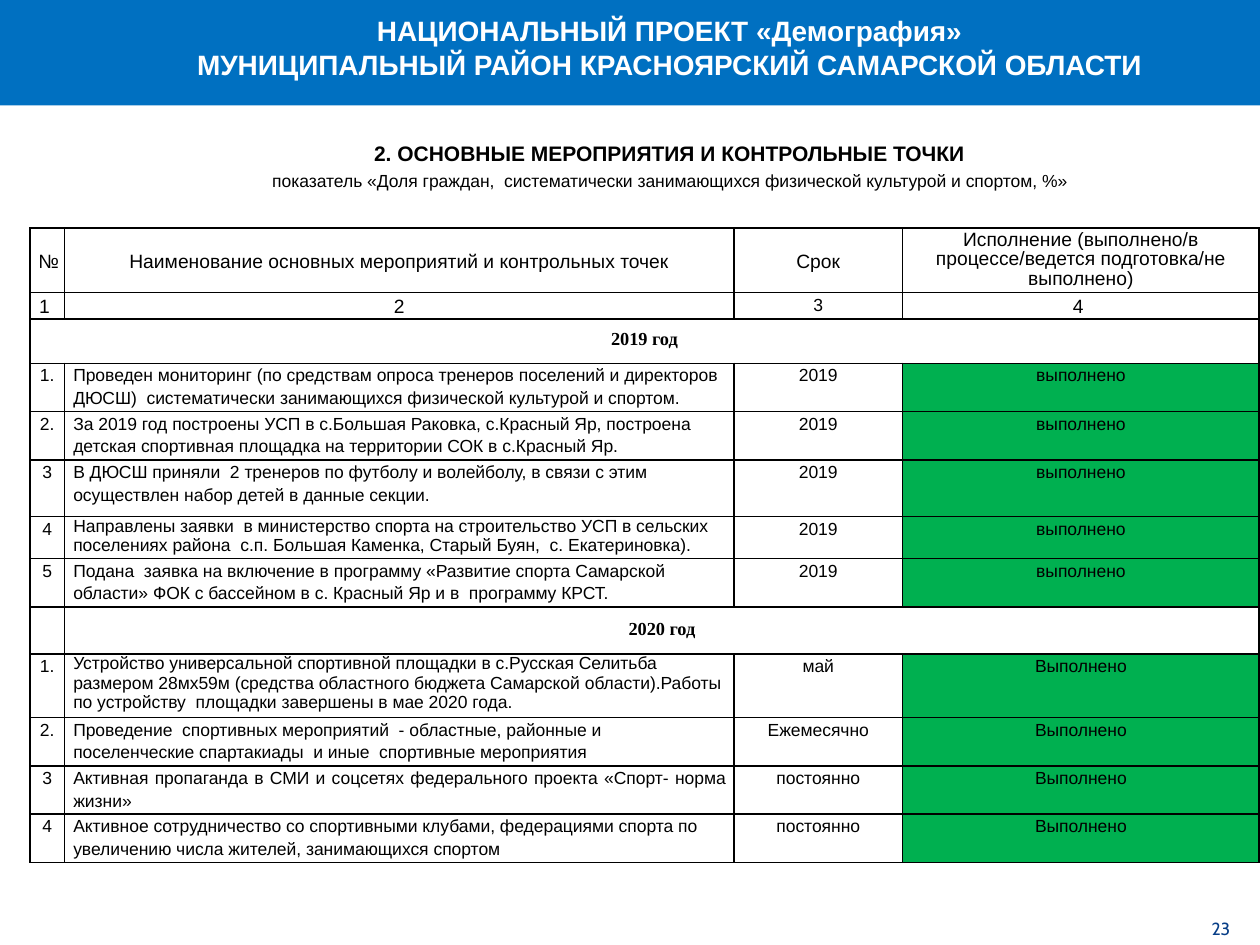
from dataclasses import dataclass

from lxml import etree
from pptx import Presentation
from pptx.dml.color import RGBColor
from pptx.enum.shapes import MSO_SHAPE
from pptx.enum.text import MSO_ANCHOR, PP_ALIGN
from pptx.oxml.ns import qn
from pptx.util import Pt

RECTANGLE = MSO_SHAPE.RECTANGLE
LEFT, CENTER, JUSTIFY = PP_ALIGN.LEFT, PP_ALIGN.CENTER, PP_ALIGN.JUSTIFY
TOP, MIDDLE, BOTTOM = MSO_ANCHOR.TOP, MSO_ANCHOR.MIDDLE, MSO_ANCHOR.BOTTOM


@dataclass(frozen=True)
class Theme:
    """Colours, fonts and type sizes of the slide."""
    banner: str = "0070C1"
    white: str = "FFFFFF"
    black: str = "000000"
    done: str = "00B050"
    page: str = "073E87"
    sans: str = "Arial"
    serif: str = "Times New Roman"
    page_font: str = "Cabin"
    title: float = 16
    heading: float = 12
    header: float = 11
    year: float = 10.5
    body: float = 10


THEME = Theme()
LOOSE = 1.15
COLUMN_WIDTHS = [20, 382.4, 96.4, 203.8]
ROW_HEIGHTS = [36.9, 15.2, 25.2, 27.6, 27.6, 32.3, 24, 27.6, 26.9, 36.3, 27.6, 27.6, 27.6]
HEADERS = [
    ("№", LOOSE),
    ("Наименование основных мероприятий и контрольных точек", LOOSE),
    ("Срок", LOOSE),
    ("Исполнение (выполнено/в процессе/ведется подготовка/не выполнено)", Pt(11)),
]
COLUMN_NUMBERS = [("1 ", THEME.header), ("2", THEME.header), ("3", THEME.body), ("4 ", THEME.header)]
ACTIVITIES_2019 = [
    ("1.", "Проведен мониторинг (по средствам опроса тренеров поселений и директоров ДЮСШ)  "
     "систематически занимающихся физической культурой и спортом.", "2019", LOOSE, LEFT),
    ("2.", "За 2019 год построены УСП в с.Большая Раковка, с.Красный Яр, построена детская "
     "спортивная площадка на территории СОК в с.Красный Яр.", "2019", LOOSE, LEFT),
    ("3", "В ДЮСШ приняли  2 тренеров по футболу и волейболу, в связи с этим осуществлен "
     "набор детей в данные секции.", "2019", LOOSE, LEFT),
    ("4", "Направлены заявки  в министерство спорта на строительство УСП в сельских поселениях "
     "района  с.п. Большая Каменка, Старый Буян,  с. Екатериновка).", "2019", 1.0, LEFT),
    ("5", "Подана  заявка на включение в программу «Развитие спорта Самарской области» ФОК "
     "с бассейном в с. Красный Яр и в  программу КРСТ.", "2019", LOOSE, LEFT),
]
ACTIVITIES_2020 = [
    ("1.", "Устройство универсальной спортивной площадки в с.Русская Селитьба  размером 28мх59м "
     "(средства областного бюджета Самарской области).Работы по устройству  площадки "
     "завершены в мае 2020 года.", "май", 1.0, LEFT),
    ("2.", "Проведение  спортивных мероприятий  - областные, районные и поселенческие "
     "спартакиады  и иные  спортивные мероприятия", "Ежемесячно", LOOSE, LEFT),
    ("3", "Активная пропаганда в СМИ и соцсетях федерального проекта «Спорт- норма жизни»",
     "постоянно", LOOSE, JUSTIFY),
    ("4", "Активное сотрудничество со спортивными клубами, федерациями спорта по увеличению "
     "числа жителей, занимающихся спортом", "постоянно", LOOSE, LEFT),
]


def style_paragraph(paragraph, size, color=THEME.black, bold=False, name=THEME.sans, align=CENTER):
    """Set alignment and font of a paragraph."""
    paragraph.alignment = align
    font = paragraph.font
    font.size, font.bold, font.name = Pt(size), bold, name
    font.color.rgb = RGBColor.from_string(color)


def add_banner(slide):
    """Draw the coloured band at the top."""
    shape = slide.shapes.add_shape(RECTANGLE, 0, 0, Pt(720), Pt(60.3))
    shape.shadow.inherit = False
    shape.fill.solid()
    shape.fill.fore_color.rgb = RGBColor.from_string(THEME.banner)
    shape.line.fill.background()


def add_text(slide, box, lines, anchor=TOP):
    """Add a text box of (text, style) lines and return its paragraphs."""
    frame = slide.shapes.add_textbox(*map(Pt, box)).text_frame
    frame.word_wrap = True
    frame.vertical_anchor = anchor
    frame.margin_left = frame.margin_right = frame.margin_top = frame.margin_bottom = Pt(3.6)
    for index, (text, style) in enumerate(lines):
        paragraph = frame.add_paragraph() if index else frame.paragraphs[0]
        paragraph.text = text
        style_paragraph(paragraph, **style)
    return frame.paragraphs


def add_borders(cell):
    """Give a cell a thin black line on every side."""
    properties = cell._tc.get_or_add_tcPr()
    for side in ("a:lnL", "a:lnR", "a:lnT", "a:lnB"):
        line = etree.SubElement(properties, qn(side), w=str(Pt(1)))
        fill = etree.SubElement(line, qn("a:solidFill"))
        etree.SubElement(fill, qn("a:srgbClr"), val=THEME.black)


def prepare_cell(cell):
    """Set margins, borders and a plain fill."""
    cell.margin_left = cell.margin_right = Pt(4.9)
    cell.margin_top = cell.margin_bottom = 0
    add_borders(cell)
    cell.fill.background()


def write_cell(cell, text, size=THEME.body, spacing=LOOSE, anchor=TOP, **style):
    """Write one styled paragraph into a cell."""
    cell.vertical_anchor = anchor
    paragraph = cell.text_frame.paragraphs[0]
    paragraph.text = text
    paragraph.line_spacing = spacing
    style_paragraph(paragraph, size, **style)


def write_year(table, row, first_column, text):
    """Write a year heading across the row."""
    cell = table.cell(row, first_column)
    cell.merge(table.cell(row, 3))
    write_cell(cell, text, THEME.year, Pt(10), MIDDLE, bold=True, name=THEME.serif)


def write_activities(table, first_row, activities, status):
    """Write activity rows with a coloured status cell."""
    for row, (number, activity, deadline, spacing, align) in enumerate(activities, first_row):
        write_cell(table.cell(row, 0), number)
        write_cell(table.cell(row, 1), activity, spacing=spacing, align=align)
        write_cell(table.cell(row, 2), deadline)
        status_cell = table.cell(row, 3)
        write_cell(status_cell, status)
        status_cell.fill.solid()
        status_cell.fill.fore_color.rgb = RGBColor.from_string(THEME.done)


def add_activity_table(slide):
    """Add the table of activities and checkpoints."""
    table = slide.shapes.add_table(
        len(ROW_HEIGHTS), len(COLUMN_WIDTHS), Pt(17), Pt(130.3),
        Pt(sum(COLUMN_WIDTHS)), Pt(sum(ROW_HEIGHTS))).table
    table.first_row = table.horz_banding = False
    for column, width in zip(table.columns, COLUMN_WIDTHS):
        column.width = Pt(width)
    for row, height in zip(table.rows, ROW_HEIGHTS):
        row.height = Pt(height)
    for cell in table.iter_cells():
        prepare_cell(cell)
    for column, (text, spacing) in enumerate(HEADERS):
        write_cell(table.cell(0, column), text, THEME.header, spacing, MIDDLE)
    for column, (text, size) in enumerate(COLUMN_NUMBERS):
        write_cell(table.cell(1, column), text, size)
    write_year(table, 2, 0, "2019 год")
    write_activities(table, 3, ACTIVITIES_2019, "выполнено")
    write_year(table, 8, 1, "2020 год")
    write_activities(table, 9, ACTIVITIES_2020, "Выполнено")


def main():
    """Build and save the slide."""
    presentation = Presentation()
    presentation.slide_width, presentation.slide_height = Pt(720), Pt(540)
    slide = presentation.slides.add_slide(presentation.slide_layouts[6])
    add_banner(slide)
    add_text(slide, (677.5, 511.2, 40.3, 28.8),
             [("23", dict(size=THEME.body, color=THEME.page, name=THEME.page_font))], BOTTOM)
    add_activity_table(slide)
    heading = add_text(slide, (87.8, 77, 589.7, 51.1), [
        ("2. ОСНОВНЫЕ МЕРОПРИЯТИЯ И КОНТРОЛЬНЫЕ ТОЧКИ", dict(size=THEME.heading, bold=True)),
        ("показатель «Доля граждан,  систематически занимающихся физической культурой "
         "и спортом, %»", dict(size=THEME.body)),
    ])
    heading[1].space_before = Pt(2)
    title_style = dict(size=THEME.title, color=THEME.white, bold=True)
    add_text(slide, (54, 4.3, 657.4, 46.1), [
        ("НАЦИОНАЛЬНЫЙ ПРОЕКТ «Демография»", title_style),
        ("МУНИЦИПАЛЬНЫЙ РАЙОН КРАСНОЯРСКИЙ САМАРСКОЙ ОБЛАСТИ", title_style),
    ])
    presentation.save("out.pptx")


if __name__ == "__main__":
    main()
